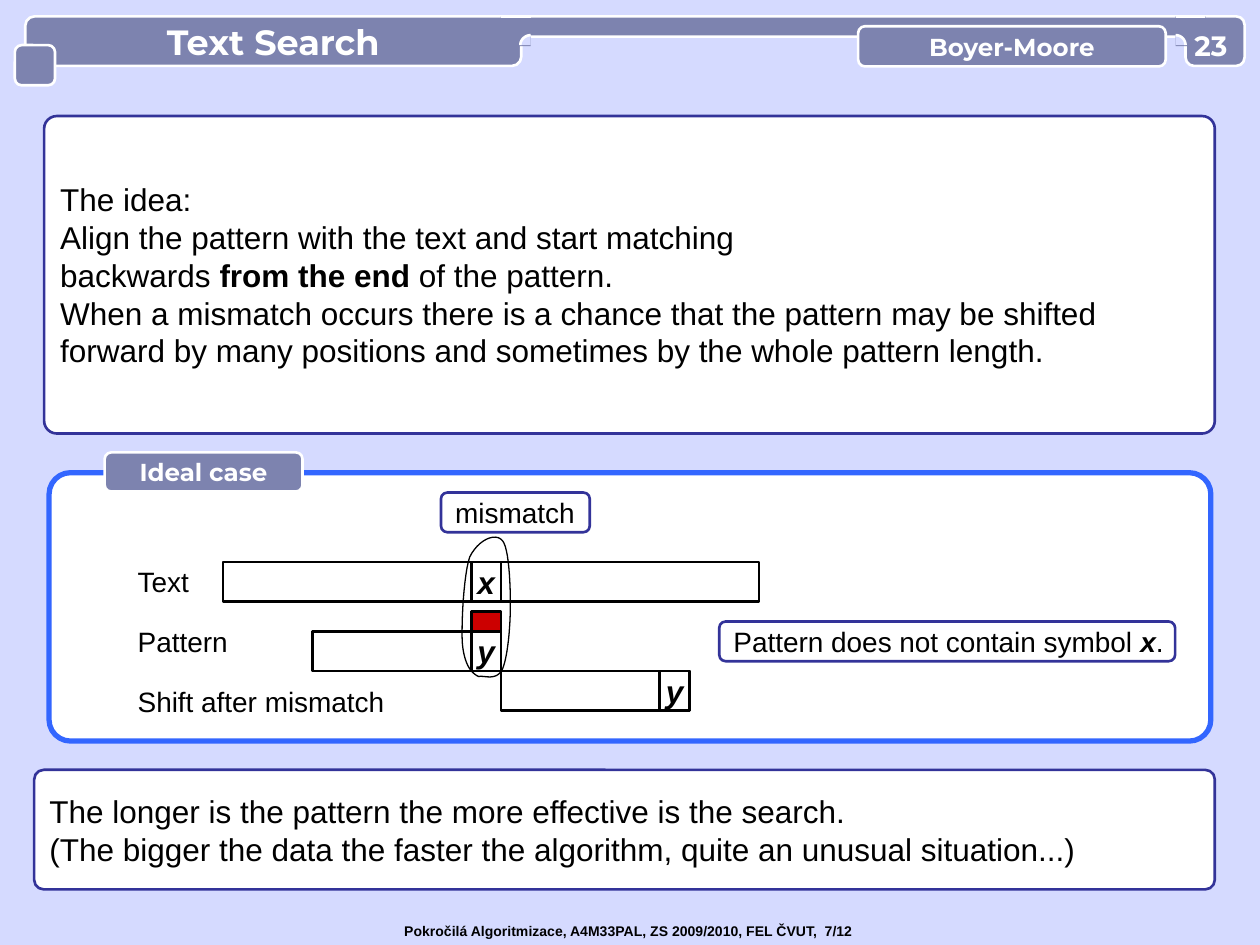
from lxml import etree
from pptx import Presentation
from pptx.dml.color import RGBColor
from pptx.enum.shapes import MSO_CONNECTOR, MSO_SHAPE
from pptx.enum.text import MSO_ANCHOR, PP_ALIGN
from pptx.oxml.ns import qn
from pptx.util import Cm, Pt

COLORS = {
    "background": "D5DAFF", "header": "7D83AF", "white": "FFFFFF",
    "black": "000000", "frame": "333399", "panel": "3366FF", "red": "CC0000",
}
C = {name: RGBColor.from_string(value) for name, value in COLORS.items()}
RECT, ROUND = MSO_SHAPE.RECTANGLE, MSO_SHAPE.ROUNDED_RECTANGLE

deck = Presentation()
deck.slide_width, deck.slide_height = Cm(25.4), Cm(19.05)
slide = deck.slides.add_slide(deck.slide_layouts[6])
slide.background.fill.solid()
slide.background.fill.fore_color.rgb = C["background"]
shapes = slide.shapes


def box(left, top, width, height, fill="white", line=None, weight=1.5, radius=None):
    """Add a rectangle, rounded when a radius is given."""
    shape = shapes.add_shape(RECT if radius is None else ROUND,
                             Cm(left), Cm(top), Cm(width), Cm(height))
    if radius is not None:
        shape.adjustments[0] = radius
    shape.shadow.inherit = False
    if fill:
        shape.fill.solid()
        shape.fill.fore_color.rgb = C[fill]
    else:
        shape.fill.background()
    if line:
        shape.line.color.rgb = C[line]
        shape.line.width = Pt(weight)
    else:
        shape.line.fill.background()
    return shape


def write(shape, *paragraphs, size=16, font="Arial", color="black", bold=False,
          italic=False, align=PP_ALIGN.LEFT, wrap=False):
    """Fill a shape with paragraphs; a tuple run is (text, bold, italic)."""
    frame = shape.text_frame
    frame.word_wrap = wrap
    frame.vertical_anchor = MSO_ANCHOR.MIDDLE
    for index, runs in enumerate(paragraphs):
        paragraph = frame.add_paragraph() if index else frame.paragraphs[0]
        paragraph.alignment = align
        for part in [runs] if isinstance(runs, str) else runs:
            text, is_bold, is_italic = (part, bold, italic) if isinstance(part, str) else part
            run = paragraph.add_run()
            run.text = text
            run.font.size, run.font.name = Pt(size), font
            run.font.bold, run.font.italic = is_bold, is_italic
            run.font.color.rgb = C[color]


heading = dict(font="Montserrat", color="white", bold=True, align=PP_ALIGN.CENTER)
symbol = dict(size=18, bold=True, italic=True, align=PP_ALIGN.CENTER)
tab = dict(fill="header", line="white", radius=0.17)

# Header bar
title = box(0.51, 0.33, 10, 1, fill="header", line="white", radius=0.19)
write(title, "Text Search", size=20, **heading)
box(10.31, 0.33, 13.79, 0.41, fill="header", line="white", radius=0.5)
box(0.3, 0.91, 0.81, 0.81, **tab)
box(23.9, 0.33, 1.19, 1, **tab)
for joint_left in (10.1, 23.7):
    box(joint_left, 0.33, 0.6, 0.6, fill="header")
    edge = shapes.add_connector(MSO_CONNECTOR.STRAIGHT, Cm(joint_left), Cm(0.33),
                                Cm(joint_left + 0.6), Cm(0.33))
    edge.line.color.rgb = C["white"]
    edge.line.width = Pt(1.5)
    etree.SubElement(edge._element.spPr, qn("a:effectLst"))
page_number = shapes.add_textbox(Cm(23.9), Cm(0.56), Cm(1.02), Cm(0.69))
margins = page_number.text_frame
margins.margin_left = margins.margin_right = margins.margin_top = margins.margin_bottom = 0
write(page_number, "23", wrap=True, **heading)
write(box(17.3, 0.53, 6.2, 0.81, **tab), "Boyer-Moore", size=14, **heading)

# Ideal case panel
box(0.99, 9.53, 23.42, 5.41, line="panel", weight=3, radius=0.08)
write(box(2.11, 9.12, 3.99, 0.79, **tab), "Ideal case", size=14, **heading)
for row, (label, label_width) in enumerate(
        [("Text", 1.6), ("Pattern", 2.39), ("Shift after mismatch", 5.99)]):
    write(box(2.49, 11.33 + 1.2 * row, label_width, 0.8, radius=0.16), label)

# Text and pattern strips, with the mismatching cell
cell_left, cell_width, strip_height = 9.5, 0.6, 0.8
for strip_left, strip_top, strip_width, letter in [
        (4.5, 11.33, 10.8, "x"), (6.3, 12.73, 3.8, "y")]:
    box(strip_left, strip_top, strip_width, strip_height, line="black")
    cell = box(cell_left, strip_top, cell_width, strip_height, line="black")
    write(cell, letter, **symbol)
box(cell_left, 12.33, cell_width, 0.4, fill="red", line="black")

# Curved outlines: mismatch loop and the two header fillets
loop = [(9.65, 13.64), (9.47, 13.56), (9.35, 13.34), (9.32, 12.95),
        (9.3, 12.55), (9.35, 11.58), (9.47, 11.23),
        (9.63, 10.9), (9.98, 10.72), (10.13, 10.9),
        (10.26, 11.05), (10.29, 11.76), (10.29, 12.19),
        (10.29, 12.62), (10.24, 13.23), (10.13, 13.49),
        (10.01, 13.74), (9.75, 13.61), (9.65, 13.64)]
left_fillet = [(10.7, 0.71), (10.59, 0.71), (10.49, 0.8), (10.49, 0.91)]
right_fillet = [(23.7, 0.71), (23.81, 0.71), (23.9, 0.8), (23.9, 0.91)]
for controls, corner, fill, line, weight in [
        (loop, None, None, "black", 0.75),
        (left_fillet, (10.7, 0.91), "background", None, 0),
        (left_fillet, None, None, "white", 1.5),
        (right_fillet, (23.7, 0.91), "background", None, 0),
        (right_fillet, None, None, "white", 1.5)]:
    points = [controls[0]]
    for start in range(0, len(controls) - 1, 3):
        for step in range(1, 13):
            t = step / 12
            weights = ((1 - t) ** 3, 3 * t * (1 - t) ** 2, 3 * t ** 2 * (1 - t), t ** 3)
            points.append(tuple(
                sum(w * point[axis] for w, point in zip(weights, controls[start:start + 4]))
                for axis in (0, 1)))
    if corner:
        points.append(corner)
    points = [(Cm(x), Cm(y)) for x, y in points]
    builder = shapes.build_freeform(*points[0])
    builder.add_line_segments(points[1:], close=bool(corner) or controls is loop)
    curve = builder.convert_to_shape()
    curve.shadow.inherit = False
    if fill:
        curve.fill.solid()
        curve.fill.fore_color.rgb = C[fill]
    else:
        curve.fill.background()
    if line:
        curve.line.color.rgb = C[line]
        curve.line.width = Pt(weight)
    else:
        curve.line.fill.background()

# Shifted pattern
box(10.1, 13.53, 3.8, strip_height, line="black")
write(box(13.3, 13.53, cell_width, strip_height, fill=None, line="black"), "y", **symbol)

# Callouts
callout = dict(line="frame", radius=0.16)
write(box(8.89, 9.93, 3, 0.8, **callout), "mismatch")
write(box(14.5, 12.53, 9.19, 0.8, **callout),
      ["Pattern does not contain symbol ", ("x", True, True), "."])

# Idea and conclusion
write(box(0.89, 2.34, 23.6, 6.4, line="frame", radius=0.04),
      "The idea:",
      "Align the pattern with the text and start matching",
      ["backwards ", ("from the end", True, False), " of the pattern."],
      "When a mismatch occurs there is a chance that the pattern may be shifted "
      "forward by many positions and sometimes by the whole pattern length.",
      size=18, wrap=True)
write(box(0.69, 15.52, 23.8, 2.41, line="frame", radius=0.08),
      "The longer is the pattern the more effective is the search.",
      "(The bigger the data the faster the algorithm, quite an unusual situation...)",
      size=18, wrap=True)

# Footer
footer = shapes.add_textbox(Cm(7.9), Cm(18.47), Cm(9.65), Cm(0.58))
write(footer, "Pokročilá Algoritmizace, A4M33PAL, ZS 2009/2010, FEL ČVUT,  7/12",
      size=8, bold=True)

deck.save("out.pptx")
